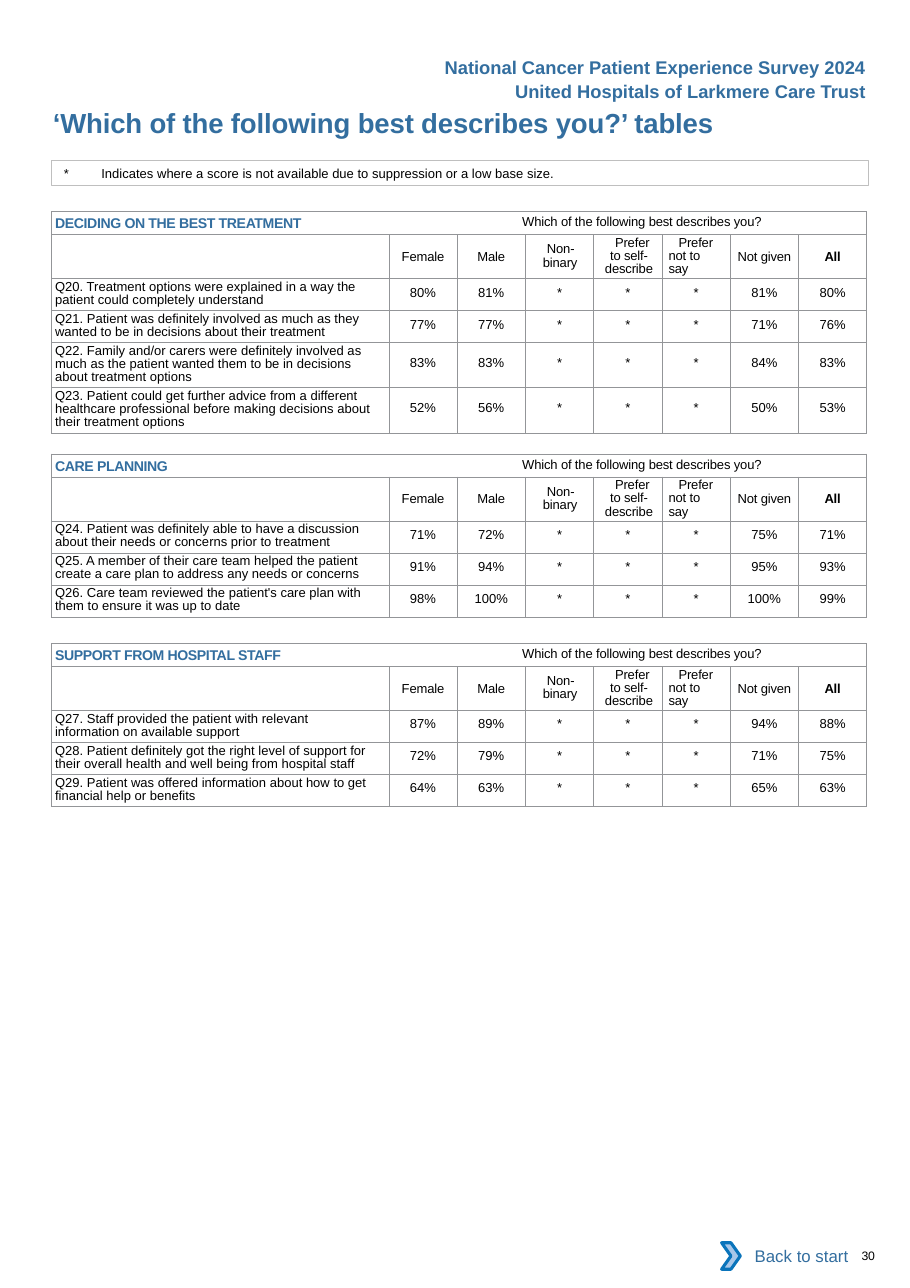
from pptx import Presentation
from pptx.dml.color import RGBColor
from pptx.enum.shapes import MSO_SHAPE
from pptx.enum.text import MSO_ANCHOR, PP_ALIGN
from pptx.oxml.ns import qn
from pptx.util import Inches, Pt
from lxml.etree import SubElement

BLUE = RGBColor(0x33, 0x6E, 0x9F)
BLACK = RGBColor(0, 0, 0)
WHITE = RGBColor(0xFF, 0xFF, 0xFF)
TABLE_GREY = RGBColor(0x93, 0x95, 0x98)
NOTE_GREY = RGBColor(0xBF, 0xBF, 0xBF)
CHEVRON_FILL = RGBColor(0xA8, 0xC7, 0xE9)
CHEVRON_LINE = RGBColor(0x0A, 0x74, 0xBB)

LEFT, WIDTH = 0.47, 7.41
QUESTION_WIDTH, SCORE_WIDTH = 3.06, 0.62
HEADING_HEIGHT, LABEL_HEIGHT = 0.21, 0.4
BODY_SIZE = 8.5
PROMPT = "Which of the following best describes you?"

# Label, alignment, left indent, first-line indent, right indent
LABELS = [
    ("Female", PP_ALIGN.CENTER, 0, 0, 0),
    ("Male", PP_ALIGN.CENTER, 0, 0, 0),
    ("Non- binary", PP_ALIGN.CENTER, 0.15, 0.01, 0.14),
    ("Prefer to self- describe", PP_ALIGN.CENTER, 0.1, 0.06, 0.08),
    ("Prefer not to say", PP_ALIGN.LEFT, 0.06, 0.09, 0.1),
    ("Not given", PP_ALIGN.CENTER, 0, 0, 0),
    ("All", PP_ALIGN.CENTER, 0, 0, 0),
]

# Heading, top, questions as (text, lines, scores)
SECTIONS = [
    ("DECIDING ON THE BEST TREATMENT", 1.92, [
        ("Q20. Treatment options were explained in a way the patient could completely understand",
         2, "80% 81% * * * 81% 80%"),
        ("Q21. Patient was definitely involved as much as they wanted to be in decisions about "
         "their treatment", 2, "77% 77% * * * 71% 76%"),
        ("Q22. Family and/or carers were definitely involved as much as the patient wanted them "
         "to be in decisions about treatment options", 3, "83% 83% * * * 84% 83%"),
        ("Q23. Patient could get further advice from a different healthcare professional before "
         "making decisions about their treatment options", 3, "52% 56% * * * 50% 53%"),
    ]),
    ("CARE PLANNING", 4.12, [
        ("Q24. Patient was definitely able to have a discussion about their needs or concerns "
         "prior to treatment", 2, "71% 72% * * * 75% 71%"),
        ("Q25. A member of their care team helped the patient create a care plan to address any "
         "needs or concerns", 2, "91% 94% * * * 95% 93%"),
        ("Q26. Care team reviewed the patient's care plan with them to ensure it was up to date",
         2, "98% 100% * * * 100% 99%"),
    ]),
    ("SUPPORT FROM HOSPITAL STAFF", 5.84, [
        ("Q27. Staff provided the patient with relevant information on available support",
         2, "87% 89% * * * 94% 88%"),
        ("Q28. Patient definitely got the right level of support for their overall health and "
         "well being from hospital staff", 2, "72% 79% * * * 71% 75%"),
        ("Q29. Patient was offered information about how to get financial help or benefits",
         2, "64% 63% * * * 65% 63%"),
    ]),
]


def style_span(span, size, color=BLACK, bold=False, spacing=0):
    """Set the font of one run, with letter spacing in points."""
    span.font.name = "Arial"
    span.font.size = Pt(size)
    span.font.bold = bold
    span.font.color.rgb = color
    if spacing:
        span.font._element.set("spc", str(round(spacing * 100)))


def write(frame, text, size, color=BLACK, bold=False, align=PP_ALIGN.LEFT, spacing=0):
    """Fill a text frame with one formatted paragraph and return it."""
    frame.text = text
    para = frame.paragraphs[0]
    para.alignment = align
    for span in para.runs:
        style_span(span, size, color, bold, spacing)
    return para


def indent(para, left, first=0, right=0, tab=None):
    """Set the indents that are not zero and an optional left tab stop in inches."""
    properties = para._p.get_or_add_pPr()
    for name, value in (("marL", left), ("indent", first), ("marR", right)):
        if value:
            properties.set(name, str(Inches(value)))
    if tab is not None:
        stops = SubElement(properties, qn("a:tabLst"))
        SubElement(stops, qn("a:tab"), pos=str(Inches(tab)), algn="l")


def set_margins(target, left=0, top=0, right=0, bottom=0):
    """Set the inner margins of a text frame or a cell in inches."""
    target.margin_left, target.margin_top = Inches(left), Inches(top)
    target.margin_right, target.margin_bottom = Inches(right), Inches(bottom)


def add_text(page, area, text, size, **style):
    """Add a text box and return its frame."""
    frame = page.shapes.add_textbox(*map(Inches, area)).text_frame
    write(frame, text, size, **style)
    return frame


def add_box(shapes, kind, area, fill=None, line=None, weight=0.5):
    """Add a flat preset shape."""
    box = shapes.add_shape(kind, *map(Inches, area))
    box.shadow.inherit = False
    if fill is None:
        box.fill.background()
    else:
        box.fill.solid()
        box.fill.fore_color.rgb = fill
    if line is None:
        box.line.fill.background()
    else:
        box.line.color.rgb = line
        box.line.width = Pt(weight)
    return box


def frame_cell(cell):
    """Give a cell thin grey borders, no fill and no margins."""
    properties = cell._tc.get_or_add_tcPr()
    for side in ("lnL", "lnR", "lnT", "lnB"):
        line = SubElement(properties, qn(f"a:{side}"), w=str(Pt(0.5)))
        fill = SubElement(line, qn("a:solidFill"))
        SubElement(fill, qn("a:srgbClr"), val=str(TABLE_GREY))
    cell.fill.background()
    set_margins(cell)


def fill_heading(cell, heading):
    """Write the section heading and the prompt in the merged top row."""
    cell.vertical_anchor = MSO_ANCHOR.MIDDLE
    para = write(cell.text_frame, f"{heading}\t", 15.8, BLUE, True, spacing=-0.2)
    para.runs[0].font._element.set("baseline", "-8000")
    prompt = para.add_run()
    prompt.text = PROMPT
    style_span(prompt, BODY_SIZE, spacing=-0.1)
    para.line_spacing = Pt(11.8)
    indent(para, 0.03, tab=4.24)


def fill_labels(cells):
    """Write the column labels."""
    for cell, (label, align, left, first, right) in zip(cells, LABELS):
        cell.vertical_anchor = MSO_ANCHOR.MIDDLE
        para = write(cell.text_frame, label, BODY_SIZE, bold=label == "All",
                     align=align, spacing=-0.1)
        indent(para, left, first, right)
        if left:
            para.line_spacing = Pt(8.6)


def fill_question(cells, question, lines, scores):
    """Write a question and its scores in one row."""
    set_margins(cells[0], top=0.02)
    para = write(cells[0].text_frame, question, BODY_SIZE)
    para.line_spacing = Pt(8.6)
    indent(para, 0.03, right=0.15)
    for cell, score in zip(cells[1:], scores.split()):
        set_margins(cell, top=0.06 * (lines - 1))
        write(cell.text_frame, score, BODY_SIZE, align=PP_ALIGN.CENTER)


def add_section(page, heading, top, questions):
    """Add the score table of one survey section."""
    heights = [HEADING_HEIGHT, LABEL_HEIGHT] + [0.05 + 0.12 * lines for _, lines, _ in questions]
    area = (LEFT, top, WIDTH, sum(heights))
    table = page.shapes.add_table(len(heights), len(LABELS) + 1, *map(Inches, area)).table
    table.first_row = table.horz_banding = False
    for column, width in zip(table.columns, [QUESTION_WIDTH] + [SCORE_WIDTH] * len(LABELS)):
        column.width = Inches(width)
    for row, height in zip(table.rows, heights):
        row.height = Inches(height)
    for cell in table.iter_cells():
        frame_cell(cell)
    rows = [list(row.cells) for row in table.rows]
    rows[0][0].merge(rows[0][-1])
    fill_heading(rows[0][0], heading)
    fill_labels(rows[1][1:])
    for cells, question in zip(rows[2:], questions):
        fill_question(cells, *question)


def add_title(page):
    """Place and format the page title."""
    title = page.shapes.title
    title.left, title.top, title.width, title.height = map(Inches, (LEFT, 0.96, 6.25, 0.3))
    frame = title.text_frame
    set_margins(frame)
    frame.vertical_anchor = MSO_ANCHOR.TOP
    para = write(frame, "‘Which of the following best describes you?’ tables", 18, BLUE, True,
                 spacing=-0.1)
    indent(para, 0.01)


def add_note(page):
    """Add the framed note that explains the asterisk."""
    box = add_box(page.shapes, MSO_SHAPE.RECTANGLE, (LEFT, 1.46, WIDTH, 0.22), line=NOTE_GREY)
    set_margins(box.text_frame, top=0.04, bottom=0.04)
    box.text_frame.vertical_anchor = MSO_ANCHOR.TOP
    para = write(box.text_frame, "*\tIndicates where a score is not available due to "
                 "suppression or a low base size.", BODY_SIZE)
    indent(para, 0.11, tab=0.34)


def add_footer(page):
    """Add the way back to the start and the page number."""
    group = page.shapes.add_group_shape()
    button = add_box(group.shapes, MSO_SHAPE.RECTANGLE, (6.62, 11.19, 1.18, 0.42), WHITE)
    button.text_frame.vertical_anchor = MSO_ANCHOR.MIDDLE
    write(button.text_frame, "Back to start", 11, BLUE, align=PP_ALIGN.RIGHT)
    add_box(group.shapes, MSO_SHAPE.CHEVRON, (6.55, 11.28, 0.17, 0.24),
            CHEVRON_FILL, CHEVRON_LINE, 2)
    number = add_text(page, (7.72, 11.33, 0.51, 0.13), "30", 8, spacing=-0.2)
    number.word_wrap = True
    set_margins(number)
    indent(number.paragraphs[0], 0.1)


def main():
    """Build the page of score tables and save it."""
    deck = Presentation()
    deck.slide_width, deck.slide_height = Inches(8.26), Inches(11.69)
    page = deck.slides.add_slide(deck.slide_layouts[5])
    add_title(page)
    for text, left, top in (("National Cancer Patient Experience Survey 2024", 3.92, 0.46),
                            ("United Hospitals of Larkmere Care Trust", 4.28, 0.68)):
        header = add_text(page, (left, top, 7.96 - left, 0.3), text, 12, color=BLUE, bold=True,
                          align=PP_ALIGN.RIGHT)
        header.word_wrap = False
    add_note(page)
    for section in SECTIONS:
        add_section(page, *section)
    add_footer(page)
    deck.save("out.pptx")


if __name__ == "__main__":
    main()
